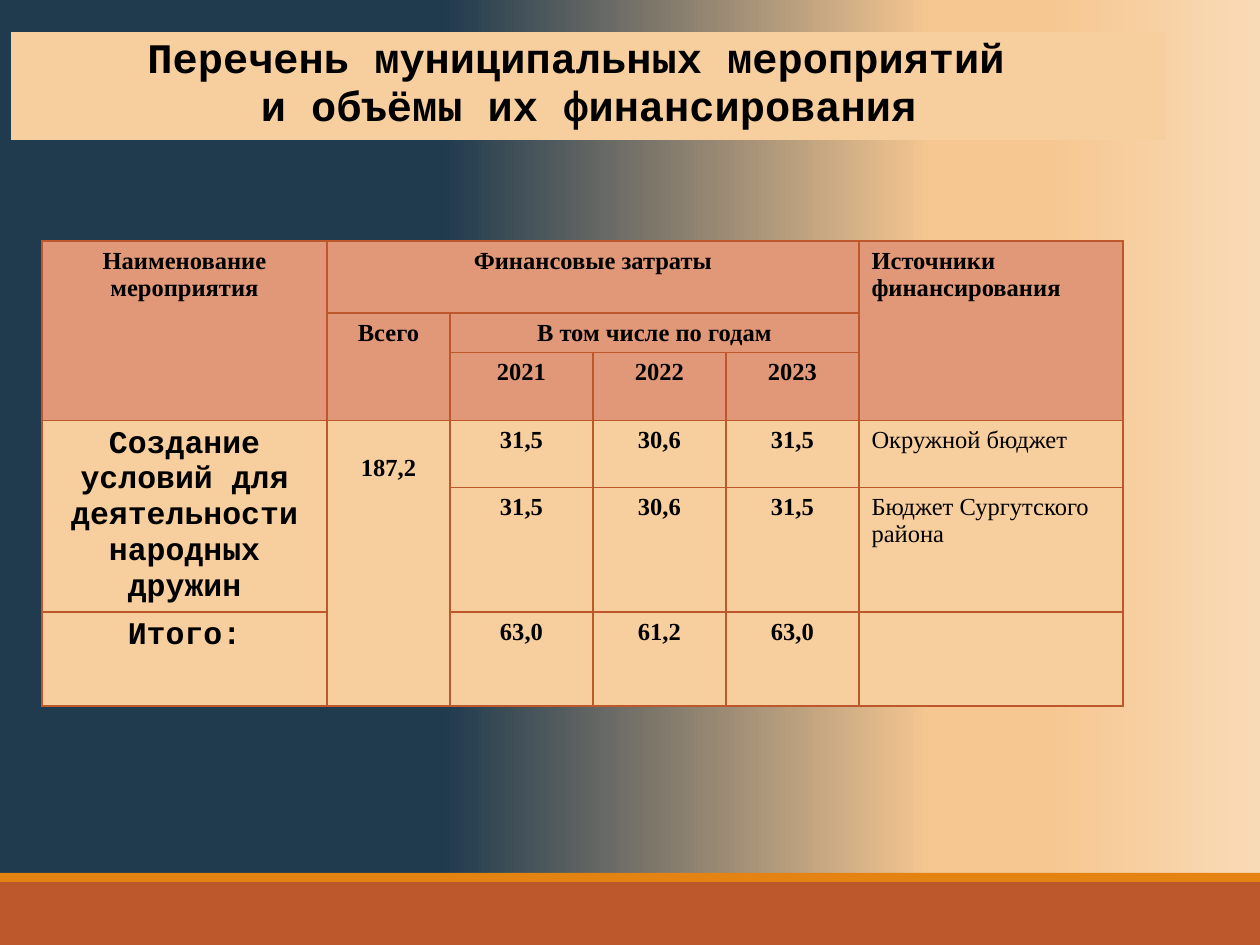
import pptx
import pptx.dml.color
import pptx.enum.shapes
import pptx.enum.text
import pptx.oxml
import pptx.oxml.ns
import pptx.util
from lxml import etree

RGBColor = pptx.dml.color.RGBColor
ALIGN = pptx.enum.text.PP_ALIGN
qn = pptx.oxml.ns.qn

PX = 914400 // 126
RUST = RGBColor(0xBD, 0x58, 0x2C)
ORANGE = RGBColor(0xE4, 0x83, 0x12)
SALMON = RGBColor(0xE0, 0x98, 0x78)
PEACH = RGBColor(0xF7, 0xCE, 0x9D)
BLACK = RGBColor(0, 0, 0)
NAVY = RGBColor(0x20, 0x3A, 0x4E)
SAND = RGBColor(0xF6, 0xC7, 0x91)
CREAM = RGBColor(0xF9, 0xDA, 0xB6)
MONO, SERIF = "Courier New", "Times New Roman"
NO_STYLE = "{2D5ABB26-0587-4C30-8999-92F81FD0307C}"


class Painter:
    def __init__(self, page):
        self.page = page

    def background(self, stops):
        fill = self.page.background.fill
        fill.gradient()
        fill.gradient_angle = 0
        stop_list = next(self.page.element.iter(qn("a:gsLst")))
        for stop in list(stop_list):
            stop_list.remove(stop)
        for percent, color in stops:
            stop = etree.SubElement(stop_list, qn("a:gs"), pos=str(percent * 1000))
            etree.SubElement(stop, qn("a:srgbClr"), val=str(color))

    def bar(self, left, top, width, height, color):
        box = self.page.shapes.add_shape(
            pptx.enum.shapes.MSO_SHAPE.RECTANGLE,
            left * PX, top * PX, width * PX, height * PX)
        box.shadow.inherit = False
        box.fill.solid()
        box.fill.fore_color.rgb = color
        box.line.fill.background()

    def table(self, left, top, widths, heights, header_rows=0, border=None):
        frame = self.page.shapes.add_table(
            len(heights), len(widths), left * PX, top * PX,
            sum(widths) * PX, sum(heights) * PX)
        table = frame.table
        table.first_row = table.horz_banding = False
        next(frame.element.iter(qn("a:tableStyleId"))).text = NO_STYLE
        for column, width in zip(table.columns, widths):
            column.width = width * PX
        for number, (row, height) in enumerate(zip(table.rows, heights)):
            row.height = height * PX
            for cell in row.cells:
                if border is not None:
                    self.border(cell, border)
                cell.fill.solid()
                cell.fill.fore_color.rgb = SALMON if number < header_rows else PEACH
        return table

    def border(self, cell, color):
        properties = cell._tc.get_or_add_tcPr()
        for side in ("a:lnL", "a:lnR", "a:lnT", "a:lnB"):
            line = etree.SubElement(properties, qn(side), w=str(pptx.util.Pt(1)))
            fill = etree.SubElement(line, qn("a:solidFill"))
            etree.SubElement(fill, qn("a:srgbClr"), val=str(color))

    def label(self, cell, text, size=14, font=SERIF, bold=True, align=ALIGN.CENTER):
        cell.text = text
        for para in cell.text_frame.paragraphs:
            para.alignment = align
            para.font.size = pptx.util.Pt(size)
            para.font.name = font
            para.font.bold = bold
            para.font.color.rgb = BLACK


def main():
    deck = pptx.Presentation()
    deck.slide_width = 1260 * PX
    deck.slide_height = 945 * PX
    painter = Painter(deck.slides.add_slide(deck.slide_layouts[6]))

    # Background and footer bars
    painter.background([(35, NAVY), (74, SAND), (83, SAND), (100, CREAM)])
    painter.bar(0, 882, 1260, 63, RUST)
    painter.bar(0, 873, 1260, 9, ORANGE)

    # Title band
    title = painter.table(11, 32, [1155], [107])
    painter.label(title.cell(0, 0),
                  "Перечень муниципальных мероприятий \nи объёмы их финансирования",
                  24, MONO)

    # Funding table: merged areas as first and last cell
    funding = painter.table(42, 241, [285, 123, 143, 133, 133, 264],
                            [72, 39, 68, 67, 124, 94], 3, RUST)
    for first, last in [((0, 0), (2, 0)), ((0, 1), (0, 4)), ((0, 5), (2, 5)),
                        ((1, 1), (2, 1)), ((1, 2), (1, 4)),
                        ((3, 0), (4, 0)), ((3, 1), (5, 1))]:
        funding.cell(*first).merge(funding.cell(*last))

    # Header
    painter.label(funding.cell(0, 0), "Наименование мероприятия")
    painter.label(funding.cell(0, 1), "Финансовые затраты")
    painter.label(funding.cell(0, 5), "Источники финансирования", align=ALIGN.LEFT)
    painter.label(funding.cell(1, 1), "Всего")
    painter.label(funding.cell(1, 2), "В том числе по годам")

    # Years and yearly amounts
    amounts = [("2021", "2022", "2023"), ("31,5", "30,6", "31,5"),
               ("31,5", "30,6", "31,5"), ("63,0", "61,2", "63,0")]
    for row, values in enumerate(amounts, 2):
        for column, value in enumerate(values, 2):
            painter.label(funding.cell(row, column), value)

    # Activities, total and sources
    painter.label(funding.cell(3, 0),
                  "Создание условий для деятельности народных дружин", 18, MONO)
    painter.label(funding.cell(5, 0), "Итого:", 18, MONO)
    painter.label(funding.cell(3, 1), "187,2")
    funding.cell(3, 1).margin_top = 34 * PX
    for row, source in enumerate(["Окружной бюджет", "Бюджет Сургутского района"], 3):
        painter.label(funding.cell(row, 5), source, bold=False, align=ALIGN.LEFT)

    deck.save("out.pptx")


if __name__ == "__main__":
    main()
